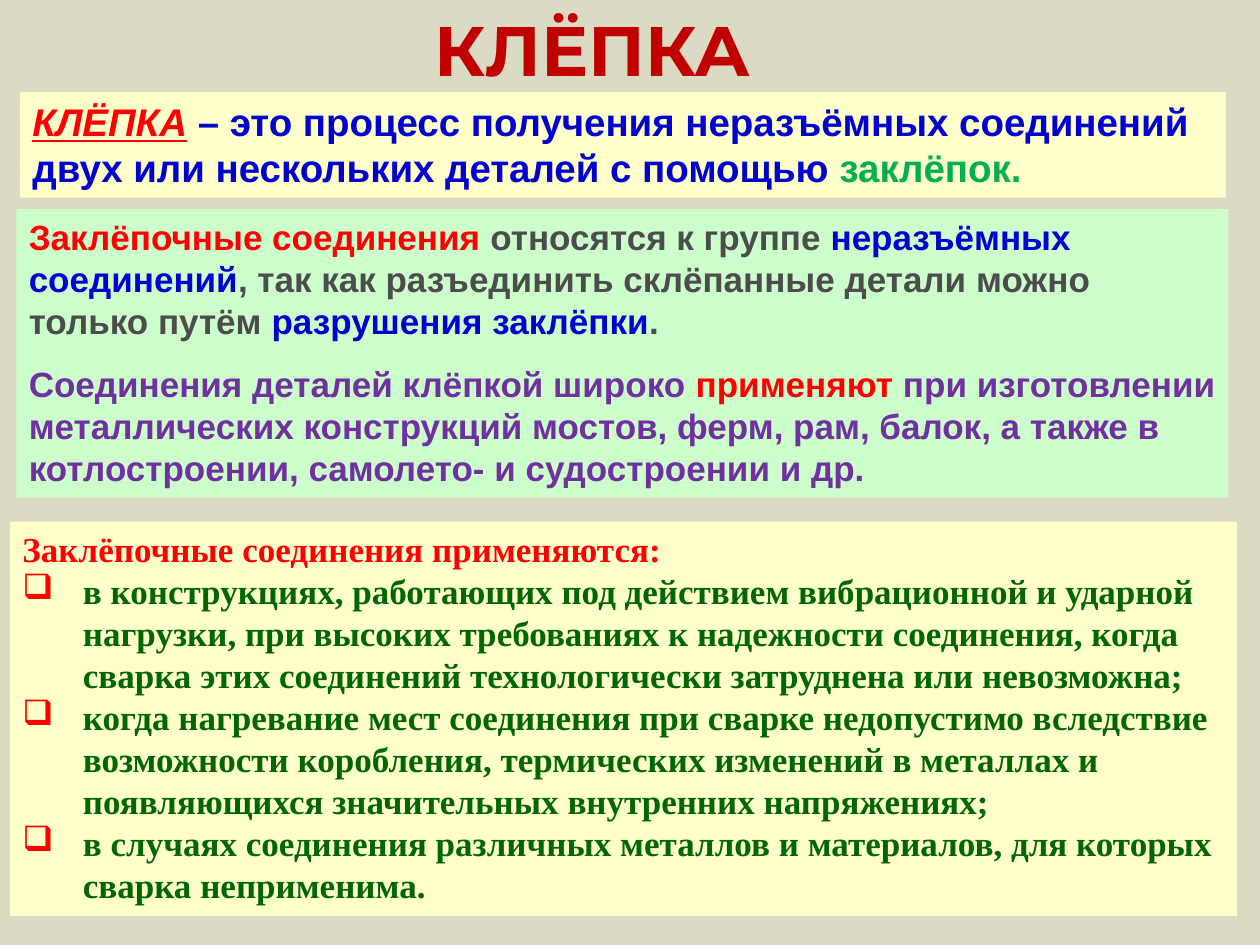
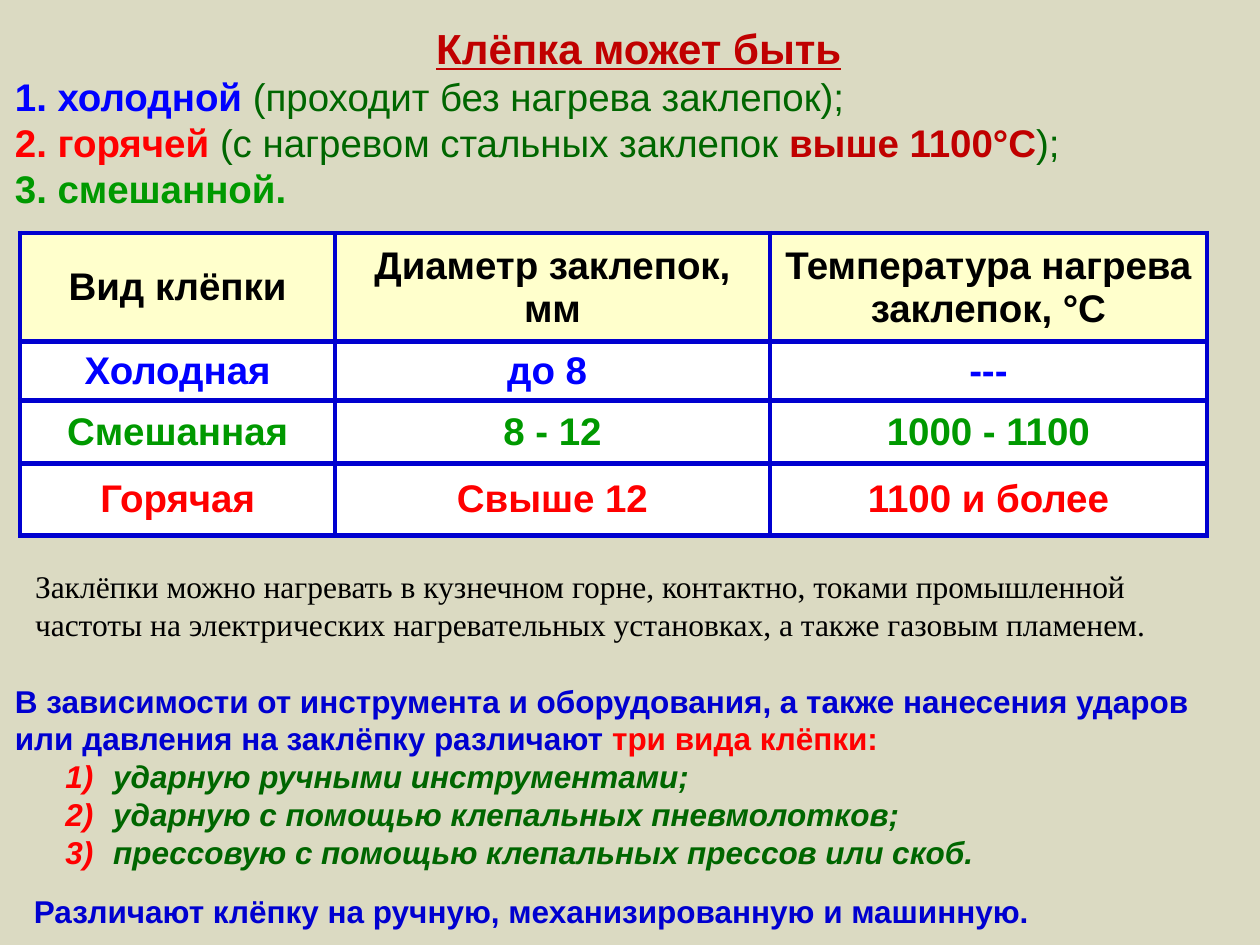
from lxml.etree import SubElement
from pptx import Presentation
from pptx.dml.color import RGBColor
from pptx.enum.shapes import MSO_SHAPE
from pptx.enum.text import MSO_ANCHOR, MSO_AUTO_SIZE, PP_ALIGN
from pptx.oxml.ns import qn
from pptx.util import Inches, Pt

# Shared colours
BACK, CREAM, MINT, WHITE = "DBDAC2", "FFFFCC", "CCFFCC", "FFFFFF"
RED, DARK_RED, NAVY, BLUE = "FF0000", "C00000", "0000D0", "0000FF"
GREEN, DARK_GREEN, LEAF = "009900", "006600", "00B050"
GREY, PURPLE, BLACK = "4C4C4C", "7030A0", "000000"


def rgb(value):
    return RGBColor.from_string(value)


def para(*runs, **options):
    """Runs are (text, colour, style letters); options are indent, bullet, after, line."""
    return runs, options


class Deck:
    def __init__(self):
        self.prs = Presentation()
        self.prs.slide_width, self.prs.slide_height = Inches(10), Inches(7.5)
        fill = self.prs.slide_master.background.fill
        fill.solid()
        fill.fore_color.rgb = rgb(BACK)
        self.s = None

    def slide(self, text, at, size, font="Arial", align=PP_ALIGN.CENTER, style="b"):
        """Start a slide and format its title."""
        self.s = self.prs.slides.add_slide(self.prs.slide_layouts[5])
        title = self.s.shapes.title
        title.left, title.top, title.width, title.height = map(Inches, at)
        tf = title.text_frame
        tf.auto_size = MSO_AUTO_SIZE.NONE
        tf.vertical_anchor = MSO_ANCHOR.TOP
        self.fill_paragraph(tf.paragraphs[0], [(text, DARK_RED, style)], size, font)
        tf.paragraphs[0].alignment = align

    def fill_paragraph(self, p, runs, size, font):
        for text, color, style in runs:
            r = p.add_run()
            r.text = text
            r.font.name, r.font.size = font, Pt(size)
            r.font.color.rgb = rgb(color)
            r.font.bold, r.font.italic = "b" in style, "i" in style
            r.font.underline = "u" in style

    def bullet(self, p, mark, left, hanging):
        pPr = p._p.get_or_add_pPr()
        pPr.set("marL", str(Inches(left)))
        pPr.set("indent", str(-Inches(hanging)))
        SubElement(SubElement(pPr, qn("a:buClr")), qn("a:srgbClr"), val=RED)
        if mark == "1)":
            SubElement(pPr, qn("a:buAutoNum"), type="arabicParenR")
        else:
            SubElement(pPr, qn("a:buChar"), char=mark)

    def text(self, at, paragraphs, size, font="Arial", fill=None):
        """Add a text box, or a filled panel when a fill is given."""
        box = list(map(Inches, at))
        if fill:
            sp = self.s.shapes.add_shape(MSO_SHAPE.RECTANGLE, *box)
            sp.shadow.inherit = False
            sp.fill.solid()
            sp.fill.fore_color.rgb = rgb(fill)
            sp.line.fill.background()
        else:
            sp = self.s.shapes.add_textbox(*box)
        tf = sp.text_frame
        tf.word_wrap = True
        tf.auto_size = MSO_AUTO_SIZE.SHAPE_TO_FIT_TEXT
        tf.vertical_anchor = MSO_ANCHOR.TOP
        for i, (runs, options) in enumerate(paragraphs):
            p = tf.add_paragraph() if i else tf.paragraphs[0]
            if "bullet" in options:
                self.bullet(p, options["bullet"], *options["indent"])
            p.alignment = PP_ALIGN.LEFT
            if "after" in options:
                p.space_after = Pt(options["after"])
            if "line" in options:
                p.line_spacing = options["line"]
            self.fill_paragraph(p, runs, size, font)

    def border(self, cell, color, width):
        tcPr = cell._tc.get_or_add_tcPr()
        for side in "LRTB":
            ln = SubElement(tcPr, qn(f"a:ln{side}"), w=str(Pt(width)))
            SubElement(SubElement(ln, qn("a:solidFill")), qn("a:srgbClr"), val=color)

    def table(self, at, widths, heights, rows, colors, size):
        frame = self.s.shapes.add_table(len(rows), len(widths), *map(Inches, at))
        table = frame.table
        table.first_row = table.horz_banding = False
        for column, width in zip(table.columns, widths):
            column.width = Inches(width)
        for i, (values, height, color) in enumerate(zip(rows, heights, colors)):
            table.rows[i].height = Inches(height)
            for j, value in enumerate(values):
                cell = table.cell(i, j)
                self.border(cell, NAVY, 3)
                cell.fill.solid()
                cell.fill.fore_color.rgb = rgb(WHITE if i else CREAM)
                cell.vertical_anchor = MSO_ANCHOR.MIDDLE
                p = cell.text_frame.paragraphs[0]
                p.alignment = PP_ALIGN.CENTER
                self.fill_paragraph(p, [(value, color, "b")], size, "Arial")


def definition_slide(deck):
    deck.slide("КЛЁПКА", (3.35, 0, 2.78, 0.77), 40, "Montserrat", PP_ALIGN.LEFT)

    # Definition
    deck.text((0.16, 0.73, 9.57, 0.84), [para(
        ("КЛЁПКА", RED, "biu"),
        (" ", GREY, "b"),
        ("– это процесс получения неразъёмных соединений двух или нескольких "
         "деталей с помощью ", NAVY, "b"),
        ("заклёпок.", LEAF, "b"))], 22, fill=CREAM)

    # Properties
    deck.text((0.13, 1.66, 9.62, 2.29), [
        para(("Заклёпочные соединения ", RED, "b"),
             ("относятся к группе ", GREY, "b"),
             ("неразъёмных соединений", NAVY, "b"),
             (", так как разъединить склёпанные детали можно только путём ", GREY, "b"),
             ("разрушения заклёпки", NAVY, "b"),
             (".", GREY, "b"), after=12),
        para(("Соединения деталей клёпкой широко ", PURPLE, "b"),
             ("применяют", RED, "b"),
             (" при изготовлении металлических конструкций мостов, ферм, рам, балок, "
              "а также в котлостроении, самолето- и судостроении и др.", PURPLE, "b")),
    ], 20, fill=MINT)

    # Uses
    uses = [
        "в конструкциях, работающих под действием вибрационной и ударной нагрузки, "
        "при высоких требованиях к надежности соединения, когда сварка этих "
        "соединений технологически затруднена или невозможна;",
        "когда нагревание мест соединения при сварке недопустимо вследствие "
        "возможности коробления, термических изменений в металлах и появляющихся "
        "значительных внутренних напряжениях;",
        "в случаях соединения различных металлов и материалов, для которых сварка "
        "неприменима.",
    ]
    deck.text((0.08, 4.14, 9.74, 3.13),
              [para(("Заклёпочные соединения применяются:", RED, "b"))]
              + [para((use, DARK_GREEN, "b"), bullet="❑", indent=(0.48, 0.48))
                 for use in uses],
              20, "Times New Roman", CREAM)


def kinds_slide(deck):
    deck.slide("Клёпка может быть", (0.02, 0.13, 10.1, 0.5), 24, style="bu")

    # Kinds by temperature
    deck.text((0.02, 0.53, 10.21, 1.22), [
        para(("1. холодной ", BLUE, "b"),
             ("(проходит без нагрева заклепок);", DARK_GREEN, "")),
        para(("2. горячей ", RED, "b"),
             ("(с нагревом стальных заклепок ", DARK_GREEN, ""),
             ("выше 1100°С", DARK_RED, "b"),
             (");", DARK_GREEN, "")),
        para(("3. смешанной.", GREEN, "b")),
    ], 22)

    # Diameters and temperatures
    deck.table((0.16, 1.85, 9.42, 2.4), (2.5, 3.45, 3.47), (0.86, 0.47, 0.5, 0.57), [
        ("Вид клёпки", "Диаметр заклепок, мм", "Температура нагрева заклепок, °С"),
        ("Холодная", "до 8 ", "---"),
        ("Смешанная", "8 - 12", "1000 - 1100"),
        ("Горячая", "Свыше 12", "1100 и более"),
    ], (BLACK, BLUE, GREEN, RED), 22)

    # Heating
    deck.text((0.18, 4.45, 9.73, 0.71), [para(
        ("Заклёпки можно нагревать в кузнечном горне, контактно, токами промышленной "
         "частоты на электрических нагревательных установках, а также газовым "
         "пламенем.", BLACK, ""))], 18, "Times New Roman")

    # Kinds by tool
    tools = [
        "ударную ручными инструментами;",
        "ударную с помощью клепальных пневмолотков;",
        "прессовую с помощью клепальных прессов или скоб.",
    ]
    deck.text((0.02, 5.36, 9.83, 1.65),
              [para(("В зависимости от инструмента и оборудования, а также нанесения "
                     "ударов или давления на заклёпку различают ", NAVY, "b"),
                    ("три вида клёпки:", RED, "b"))]
              + [para((tool, DARK_GREEN, "bi"), bullet="1)", indent=(0.78, 0.38))
                 for tool in tools], 18)

    # Summary
    deck.text((0.17, 7.01, 9.41, 0.46), [para(
        ("Различают клёпку на ручную, механизированную и машинную.", NAVY, "b"),
        after=7.5, line=1.07)], 18)


def main():
    deck = Deck()
    definition_slide(deck)
    kinds_slide(deck)
    deck.prs.save("out.pptx")


if __name__ == "__main__":
    main()
